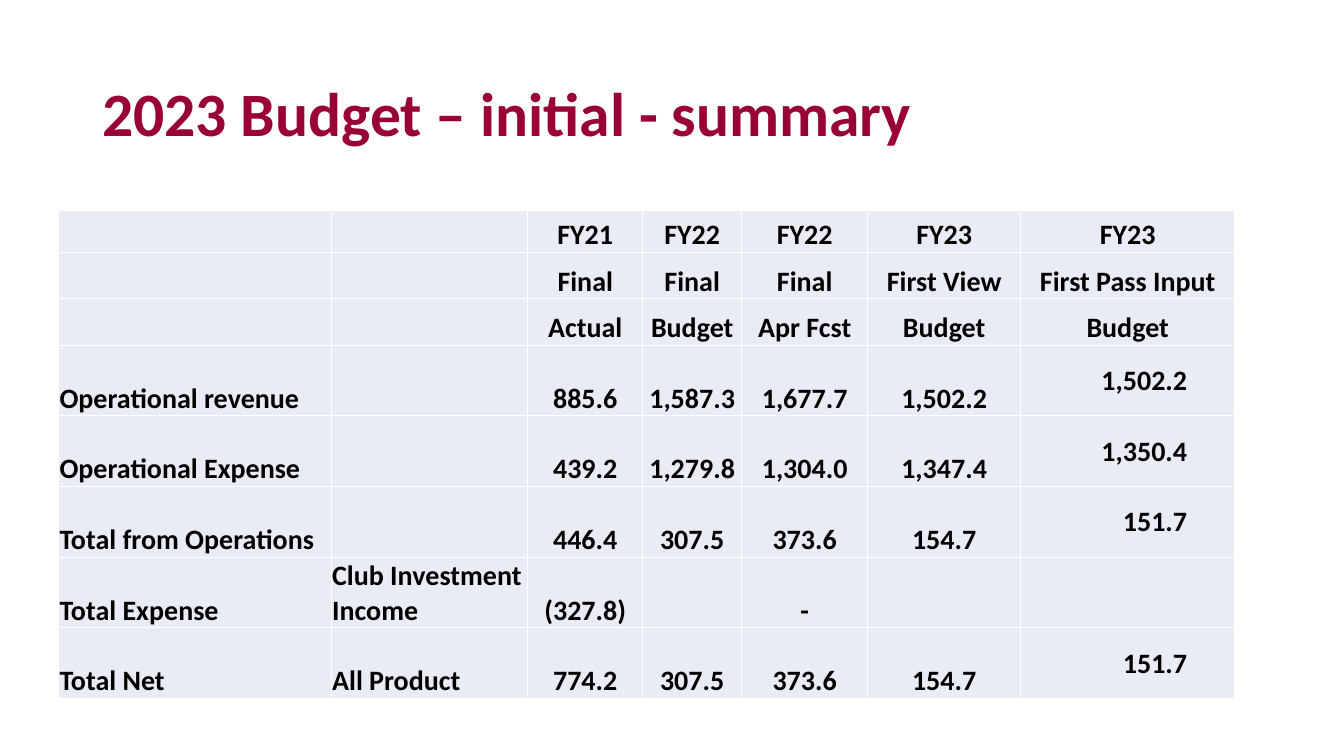
import lxml.etree
import pptx
import pptx.dml.color
import pptx.enum.text
import pptx.oxml.ns
import pptx.util

Cm = pptx.util.Cm
ALIGN = pptx.enum.text.PP_ALIGN
ANCHOR = pptx.enum.text.MSO_ANCHOR

CRIMSON = pptx.dml.color.RGBColor(0x99, 0x00, 0x33)
BLACK = pptx.dml.color.RGBColor(0x00, 0x00, 0x00)
WHITE = pptx.dml.color.RGBColor(0xFF, 0xFF, 0xFF)
PALE_BLUE = pptx.dml.color.RGBColor(0xE9, 0xEB, 0xF5)

COLUMN_WIDTHS = [6.87, 4.95, 2.9, 2.49, 3.18, 3.85, 5.4]
ROW_HEIGHTS = [1.07, 1.17, 1.17] + [1.78] * 5
HEADER_ROWS = 3
LABEL_COLUMNS = 2
BUDGET_ROWS = [
    ["", "", "FY21", "FY22", "FY22", "FY23", "FY23"],
    ["", "", "Final", "Final", "Final", "First View", "First Pass Input"],
    ["", "", "Actual", "Budget", "Apr Fcst", "Budget", "Budget"],
    ["Operational revenue", "", "885.6", "1,587.3", "1,677.7", "1,502.2", "1,502.2"],
    ["Operational Expense", "", "439.2", "1,279.8", "1,304.0", "1,347.4", "1,350.4"],
    ["Total from Operations", "", "446.4", "307.5", "373.6", "154.7", "151.7"],
    ["Total Expense", "Club Investment Income", "(327.8)", "", "-", "", ""],
    ["Total Net", "All Product", "774.2", "307.5", "373.6", "154.7", "151.7"],
]


def format_runs(paragraph, size, color):
    for run in paragraph.runs:
        run.font.name = "Calibri"
        run.font.size = pptx.util.Pt(size)
        run.font.bold = True
        run.font.color.rgb = color


def add_title(slide, left, top, width, height):
    shape = slide.shapes.add_textbox(left, top, width, height)
    text_frame = shape.text_frame
    text_frame.word_wrap = True
    text_frame.vertical_anchor = ANCHOR.MIDDLE
    text_frame.text = "2023 Budget – initial - summary"
    paragraph = text_frame.paragraphs[0]
    paragraph.line_spacing = 0.9
    format_runs(paragraph, 44, CRIMSON)


def add_cell_borders(cell):
    properties = cell._tc.get_or_add_tcPr()
    qualify = pptx.oxml.ns.qn
    for side in ("a:lnL", "a:lnR", "a:lnT", "a:lnB"):
        line = lxml.etree.SubElement(properties, qualify(side), w=str(pptx.util.Pt(1)))
        fill = lxml.etree.SubElement(line, qualify("a:solidFill"))
        lxml.etree.SubElement(fill, qualify("a:srgbClr"), val=str(WHITE))


def fill_cell(cell, text, row, column):
    add_cell_borders(cell)
    cell.fill.solid()
    cell.fill.fore_color.rgb = PALE_BLUE
    cell.margin_left = cell.margin_right = cell.margin_top = Cm(0.02)
    cell.margin_bottom = 0
    cell.vertical_anchor = ANCHOR.BOTTOM
    cell.text_frame.text = text
    paragraph = cell.text_frame.paragraphs[0]
    if column < LABEL_COLUMNS:
        paragraph.alignment = ALIGN.LEFT
    elif row >= HEADER_ROWS and column == len(COLUMN_WIDTHS) - 1:
        paragraph.alignment = ALIGN.RIGHT
        cell.margin_right = Cm(1.2)
        cell.vertical_anchor = ANCHOR.MIDDLE
    else:
        paragraph.alignment = ALIGN.CENTER
    format_runs(paragraph, 20, BLACK)


def add_budget_table(slide, left, top, width, height):
    frame = slide.shapes.add_table(
        len(ROW_HEIGHTS), len(COLUMN_WIDTHS), left, top, width, height
    )
    table = frame.table
    table.first_row = False
    table.horz_banding = False
    for column, column_width in zip(table.columns, COLUMN_WIDTHS):
        column.width = Cm(column_width)
    for row, row_height in zip(table.rows, ROW_HEIGHTS):
        row.height = Cm(row_height)
    for row_index, texts in enumerate(BUDGET_ROWS):
        for column_index, text in enumerate(texts):
            cell = table.cell(row_index, column_index)
            fill_cell(cell, text, row_index, column_index)


def main():
    presentation = pptx.Presentation()
    presentation.slide_width = Cm(33.87)
    presentation.slide_height = Cm(19.05)
    slide = presentation.slides.add_slide(presentation.slide_layouts[6])
    add_title(slide, Cm(2.33), Cm(1.9), Cm(29.21), Cm(2.1))
    add_budget_table(
        slide, Cm(1.48), Cm(5.29), Cm(sum(COLUMN_WIDTHS)), Cm(sum(ROW_HEIGHTS))
    )
    presentation.save("out.pptx")


if __name__ == "__main__":
    main()
